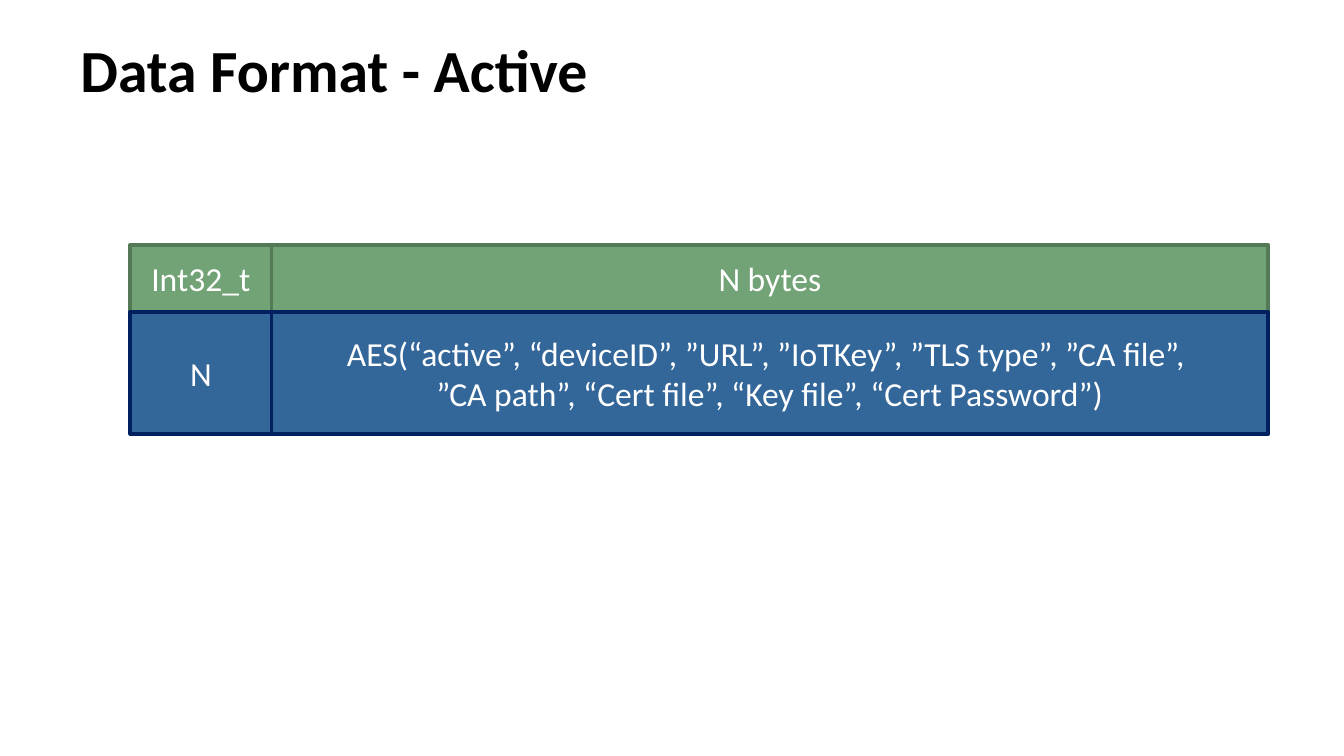
from dataclasses import dataclass

from pptx import Presentation
from pptx import util as u
from pptx.dml import color
from pptx.enum import shapes, text

PX = u.Inches(1) // 96


@dataclass(frozen=True)
class Theme:
    font: str = "Calibri"
    title_size: int = 32
    cell_size: int = 18
    border: int = 2
    ink: str = "000000"
    cell_ink: str = "FFFFFF"
    header: tuple = ("72A376", "547957")
    body: tuple = ("336699", "002060")


THEME = Theme()


def rgb(value):
    return color.RGBColor.from_string(value)


def emu(lengths):
    return [length * PX for length in lengths]


def write(shape, content, size, ink, bold=False, align=text.PP_ALIGN.LEFT):
    frame = shape.text_frame
    frame.word_wrap = True
    frame.vertical_anchor = text.MSO_ANCHOR.MIDDLE
    frame.text = content
    for paragraph in frame.paragraphs:
        paragraph.alignment = align
        for run in paragraph.runs:
            run.font.name = THEME.font
            run.font.size = u.Pt(size)
            run.font.bold = bold
            run.font.color.rgb = rgb(ink)


def add_title(slide, box, title):
    shape = slide.shapes.add_textbox(*emu(box))
    write(shape, title, THEME.title_size, THEME.ink, bold=True)


def add_field(slide, box, label, colors):
    fill, border = colors
    shape = slide.shapes.add_shape(shapes.MSO_SHAPE.RECTANGLE, *emu(box))
    shape.shadow.inherit = False
    shape.fill.solid()
    shape.fill.fore_color.rgb = rgb(fill)
    shape.line.color.rgb = rgb(border)
    shape.line.width = u.Pt(THEME.border)
    write(shape, label, THEME.cell_size, THEME.cell_ink,
          align=text.PP_ALIGN.CENTER)


def add_packet(slide, box, fields, length_width, header_height):
    left, top, width, height = box
    columns = ((left, length_width),
               (left + length_width, width - length_width))
    rows = ((top, header_height, THEME.header),
            (top + header_height, height - header_height, THEME.body))
    for (y, row_height, colors), labels in zip(rows, fields):
        for (x, column_width), label in zip(columns, labels):
            add_field(slide, (x, y, column_width, row_height), label, colors)


def main():
    presentation = Presentation()
    presentation.slide_width, presentation.slide_height = emu((960, 540))
    slide = presentation.slides.add_slide(presentation.slide_layouts[6])
    add_title(slide, (48, 9, 864, 80), "Data Format - Active")
    payload = (
        "AES(“active”, “deviceID”, ”URL”, ”IoTKey”, ”TLS type”, ”CA file”, \n"
        "”CA path”, “Cert file”, “Key file”, “Cert Password”)"
    )
    fields = (("Int32_t", "N bytes"), ("N", payload))
    add_packet(slide, (93, 175, 813, 135), fields,
               length_width=101, header_height=48)
    presentation.save("out.pptx")


if __name__ == "__main__":
    main()
